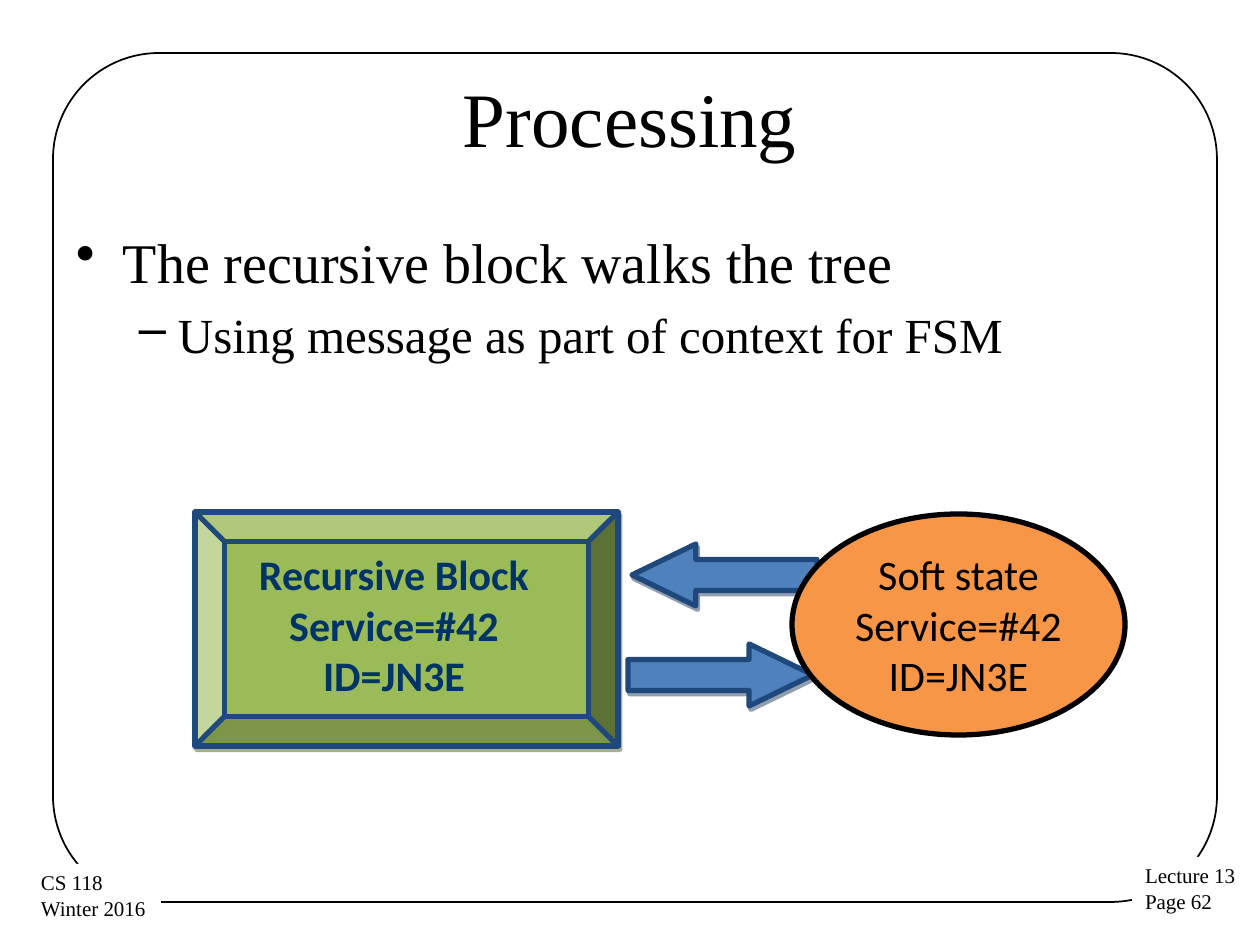
from lxml import etree
from pptx import Presentation
from pptx.dml.color import RGBColor
from pptx.enum.shapes import MSO_SHAPE
from pptx.enum.text import MSO_ANCHOR, PP_ALIGN
from pptx.oxml.ns import qn
from pptx.util import Pt

EMU_PER_PX = 914400 / 126
ROUNDED, RECT, OVAL = MSO_SHAPE.ROUNDED_RECTANGLE, MSO_SHAPE.RECTANGLE, MSO_SHAPE.OVAL
BEVEL, LEFT_ARROW, RIGHT_ARROW = MSO_SHAPE.BEVEL, MSO_SHAPE.LEFT_ARROW, MSO_SHAPE.RIGHT_ARROW
LEFT, CENTER = PP_ALIGN.LEFT, PP_ALIGN.CENTER
TOP, MIDDLE = MSO_ANCHOR.TOP, MSO_ANCHOR.MIDDLE

SERIF, SANS = "Times New Roman", "Calibri"
BLACK, WHITE, NAVY = "000000", "FFFFFF", "003366"
BLUE, DARK_BLUE, GREEN, ORANGE = "4F81BD", "1F497D", "9BBB59", "F79646"
BLUE_SHADOW, GREEN_SHADOW = "243F60", "4E6128"


def px(length):
    return round(length * EMU_PER_PX)


def rgb(value):
    return RGBColor.from_string(value)


def style_font(paragraph, size, face, color=BLACK, bold=False):
    font = paragraph.font
    font.size, font.name, font.bold = Pt(size), face, bold
    font.color.rgb = rgb(color)


def setup_frame(frame, inset=(13, 6), anchor=TOP, wrap=True):
    frame.word_wrap = wrap
    frame.vertical_anchor = anchor
    frame.margin_left = frame.margin_right = px(inset[0])
    frame.margin_top = frame.margin_bottom = px(inset[1])


def write_lines(frame, lines, size, face, color=BLACK, bold=False, align=CENTER):
    for number, line in enumerate(lines):
        paragraph = frame.add_paragraph() if number else frame.paragraphs[0]
        paragraph.text = line
        paragraph.alignment = align
        style_font(paragraph, size, face, color, bold)


def add_text_box(slide, box, **frame_options):
    frame = slide.shapes.add_textbox(*map(px, box)).text_frame
    setup_frame(frame, **frame_options)
    return frame


def add_block(slide, kind, box, fill=None, line=None, width=3, adjustments=()):
    block = slide.shapes.add_shape(kind, *map(px, box))
    block.shadow.inherit = False
    for index, value in enumerate(adjustments):
        block.adjustments[index] = value
    if fill:
        block.fill.solid()
        block.fill.fore_color.rgb = rgb(fill)
    else:
        block.fill.background()
    if line:
        block.line.color.rgb = rgb(line)
        block.line.width = Pt(width)
    else:
        block.line.fill.background()
    return block


def cast_shadow(block, color):
    """Give the block a hard, half-transparent shadow to the lower right."""
    effects = block.element.spPr.find(qn("a:effectLst"))
    shadow = etree.SubElement(effects, qn("a:outerShdw"), blurRad="0", dist=str(Pt(2.2)),
                              dir=str(63 * 60000), algn="ctr", rotWithShape="0")
    tint = etree.SubElement(shadow, qn("a:srgbClr"), val=color)
    etree.SubElement(tint, qn("a:alpha"), val="50000")


def add_footer(slide, box, lines):
    footer = add_block(slide, RECT, box, fill=WHITE)
    setup_frame(footer.text_frame, wrap=False)
    write_lines(footer.text_frame, lines, 12, SERIF, align=LEFT)


def write_bullet(paragraph, text, mark, size, indent, hanging, level=0):
    paragraph.text = text
    paragraph.level = level
    properties = paragraph._p.get_or_add_pPr()
    properties.set("marL", str(px(indent)))
    properties.set("indent", str(-px(hanging)))
    etree.SubElement(properties, qn("a:buChar"), char=mark)
    style_font(paragraph, size, SERIF)


def add_bullets(slide):
    frame = add_text_box(slide, (63, 221, 1134, 624))
    write_bullet(frame.paragraphs[0], "The recursive block walks the tree", "•", 32, 47, 47)
    detail = frame.add_paragraph()
    write_bullet(detail, "Using message as part of context for FSM", "–", 28, 102, 39, level=1)
    detail.space_before = Pt(6)


def add_exchange(slide):
    """Draw the recursive block and the soft state with the arrows between them."""
    message = ["Service=#42", "ID=JN3E"]
    for kind, left, top in ((LEFT_ARROW, 632, 544), (RIGHT_ARROW, 628, 644)):
        arrow = add_block(slide, kind, (left, top, 185, 62), BLUE, DARK_BLUE,
                          adjustments=(0.5, 1.03))
        cast_shadow(arrow, BLUE_SHADOW)

    recursive_block = add_block(slide, BEVEL, (195, 512, 423, 234), GREEN, DARK_BLUE,
                                adjustments=(0.125,))
    cast_shadow(recursive_block, GREEN_SHADOW)
    caption = add_text_box(slide, (221, 544, 346, 179), inset=(9, 5))
    write_lines(caption, ["Recursive Block"] + message, 24, SANS, NAVY, bold=True)

    soft_state = add_block(slide, OVAL, (792, 514, 333, 221), ORANGE, BLACK)
    setup_frame(soft_state.text_frame, inset=(0, 0), anchor=MIDDLE)
    write_lines(soft_state.text_frame, ["Soft state"] + message, 24, SANS)


def main():
    deck = Presentation()
    deck.slide_width, deck.slide_height = px(1260), px(945)
    slide = deck.slides.add_slide(deck.slide_layouts[6])

    add_block(slide, ROUNDED, (53, 53, 1164, 849), line=BLACK, width=1, adjustments=(0.125,))
    add_footer(slide, (1132, 857, 117, 64), ["Lecture 13", "Page 62"])
    add_footer(slide, (28, 864, 133, 64), ["CS 118", "Winter 2016"])
    title = add_text_box(slide, (63, 38, 1134, 157), anchor=MIDDLE)
    write_lines(title, ["Processing"], 44, SERIF)
    add_bullets(slide)
    add_exchange(slide)
    deck.save("out.pptx")


if __name__ == "__main__":
    main()
